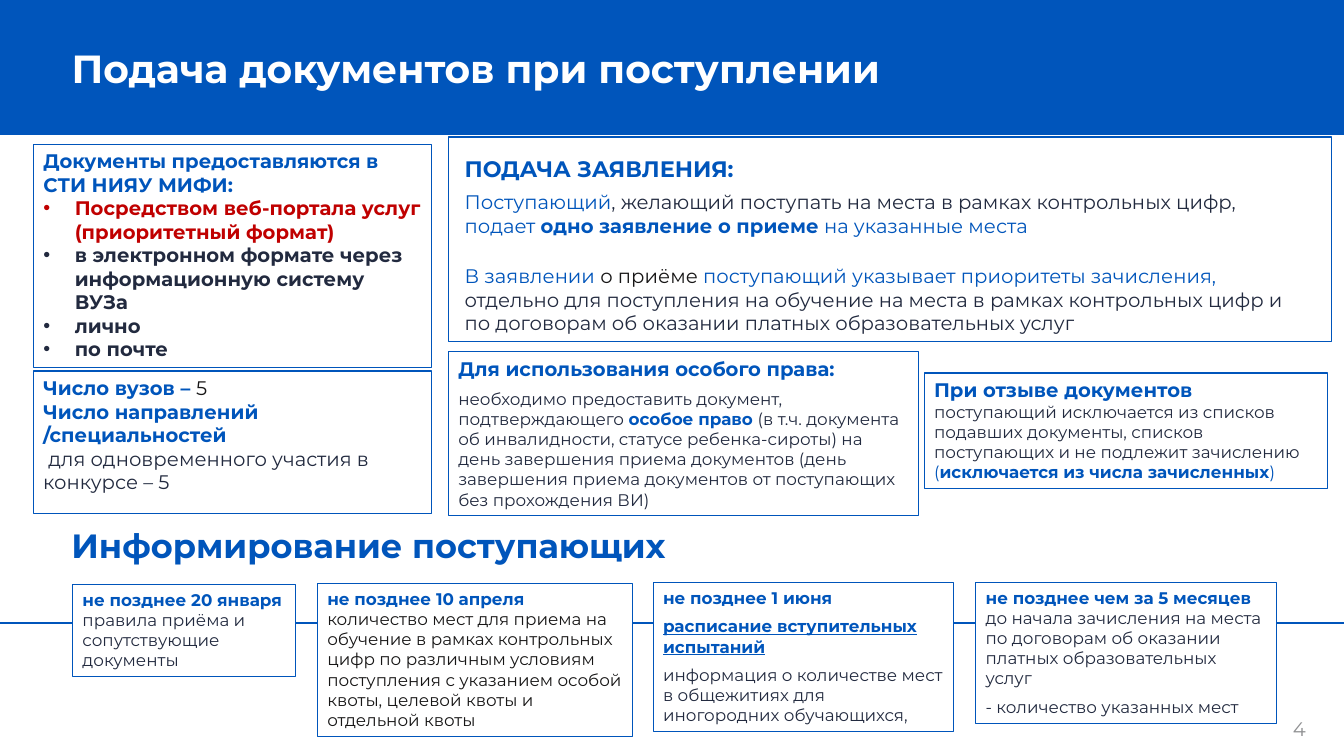
from dataclasses import dataclass

import pptx
import pptx.dml.color
import pptx.enum.shapes
import pptx.enum.text
import pptx.oxml
import pptx.oxml.ns
import pptx.util
from pptx.util import Cm

FONT = "Montserrat"
BLUE, NAVY, BLACK, RED = "0055BB", "222A3F", "171616", "C00000"
WHITE, GREY = "FFFFFF", "8F9092"
WIDTH, HEIGHT = 33.87, 19.05


@dataclass
class Span:
    text: str
    color: str = NAVY
    bold: bool = False
    size: float = 14
    underline: bool = False
    line_break: bool = False


@dataclass
class Para:
    spans: list[Span]
    after: float = 0
    bullet: bool = False


@dataclass
class Box:
    left: float
    top: float
    width: float
    height: float
    paras: list[Para]
    fill: str | None = None
    line: float | None = 0.75


def rgb(color: str) -> pptx.dml.color.RGBColor:
    return pptx.dml.color.RGBColor.from_string(color)


def place(sp, left: float, top: float, width: float, height: float) -> None:
    sp.left, sp.top, sp.width, sp.height = Cm(left), Cm(top), Cm(width), Cm(height)


def set_bullet(p, bullet: bool) -> None:
    """Override the bullet and indent that a placeholder inherits."""
    pPr = p._p.get_or_add_pPr()
    indent = Cm(0.79) if bullet else 0
    pPr.set("marL", str(indent))
    pPr.set("indent", str(-indent))
    bu = '<a:buChar {} char="•"/>' if bullet else "<a:buNone {}/>"
    pPr.append(pptx.oxml.parse_xml(bu.format(pptx.oxml.ns.nsdecls("a"))))


def write(sp, paras: list[Para], anchor=pptx.enum.text.MSO_ANCHOR.TOP, wrap: bool = True) -> None:
    tf = sp.text_frame
    tf.word_wrap = wrap
    tf.auto_size = pptx.enum.text.MSO_AUTO_SIZE.NONE
    tf.vertical_anchor = anchor
    for i, para in enumerate(paras):
        p = tf.add_paragraph() if i else tf.paragraphs[0]
        p.alignment = pptx.enum.text.PP_ALIGN.LEFT
        p.space_before = pptx.util.Pt(0)
        p.space_after = pptx.util.Pt(para.after)
        set_bullet(p, para.bullet)
        for span in para.spans:
            r = p.add_run()
            r.text = span.text
            r.font.name = FONT
            r.font.size = pptx.util.Pt(span.size)
            r.font.bold = span.bold
            r.font.underline = span.underline
            r.font.color.rgb = rgb(span.color)
            if span.line_break:
                p.add_line_break()


def add_rect(s, left: float, top: float, width: float, height: float,
             fill: str | None = None, line: float | None = None):
    sp = s.shapes.add_shape(pptx.enum.shapes.MSO_SHAPE.RECTANGLE,
                            Cm(left), Cm(top), Cm(width), Cm(height))
    sp.shadow.inherit = False
    style_outline(sp, line)
    if fill:
        sp.fill.solid()
        sp.fill.fore_color.rgb = rgb(fill)
    else:
        sp.fill.background()
    return sp


def style_outline(sp, line: float | None) -> None:
    if line:
        sp.line.color.rgb = rgb(BLUE)
        sp.line.width = pptx.util.Pt(line)
    else:
        sp.line.fill.background()


def add_text(s, left: float, top: float, width: float, height: float, paras: list[Para], **layout) -> None:
    write(s.shapes.add_textbox(Cm(left), Cm(top), Cm(width), Cm(height)), paras, **layout)


def date_head(text: str) -> Span:
    return Span(text, BLUE, True, 12, line_break=True)


DOCUMENTS = [
    Para([Span("Документы предоставляются в СТИ НИЯУ МИФИ:", BLUE, True)]),
    Para([Span("Посредством веб-портала услуг (приоритетный формат)", RED, True)], bullet=True),
    *(Para([Span(way, NAVY, True)], bullet=True) for way in (
        "в электронном формате через информационную систему ВУЗа", "лично", "по почте")),
]
APPLICATION = [
    Para([Span("ПОДАЧА ЗАЯВЛЕНИЯ:", BLUE, True, 16)], 6),
    Para([Span("Поступающий", BLUE),
          Span(", желающий поступать на места в рамках контрольных цифр, "),
          Span("подает ", BLUE), Span("одно заявление о приеме", BLUE, True),
          Span(" на указанные места", BLUE)], 6),
]
PRIORITIES = [
    Para([Span("В заявлении ", BLUE), Span("о приёме ", BLACK),
          Span("поступающий указывает приоритеты зачисления, ", BLUE),
          Span("отдельно для поступления на обучение на места в рамках контрольных цифр "
               "и по договорам об оказании платных образовательных услуг")], 6),
]
RULES = [
    Box(23.29, 9.4, 10.16, 2.9, [
        Para([Span("При отзыве документов", BLUE, True, line_break=True),
              Span("поступающий исключается из списков подавших документы, списков "
                   "поступающих и не подлежит зачислению ", size=12),
              Span("(", BLUE, size=12),
              Span("исключается из числа зачисленных", BLUE, True, 12),
              Span(")", BLUE, size=12)], 6)]),
    Box(11.3, 8.86, 11.84, 4.14, [
        Para([Span("Для использования особого права:", BLUE, True)], 6),
        Para([Span("необходимо предоставить документ, подтверждающего ", size=12),
              Span("особое право ", BLUE, True, 12),
              Span("(в т.ч. документа об инвалидности, статусе ребенка-сироты) на день "
                   "завершения приема документов (день завершения приема документов "
                   "от поступающих без прохождения ВИ)", size=12)], 6)]),
    Box(0.84, 9.35, 10.03, 3.58, [
        Para([Span("Число вузов – ", BLUE, True), Span("5", BLACK)]),
        Para([Span("Число направлений /специальностей", BLUE, True)]),
        Para([Span(" для одновременного участия в конкурсе – 5")])]),
]
DATES = [
    Box(1.83, 14.73, 5.61, 2.31, [
        Para([date_head("не позднее 20 января"),
              Span("правила приёма и сопутствующие документы", size=12)], 6)], WHITE),
    Box(8, 14.71, 7.95, 3.84, [
        Para([date_head("не позднее 10 апреля"),
              Span("количество мест для приема на обучение в рамках контрольных цифр "
                   "по различным условиям поступления с указанием особой квоты, "
                   "целевой квоты и отдельной квоты", BLACK, size=12)], 6)], WHITE),
    Box(16.46, 14.68, 7.57, 3.76, [
        Para([Span("не позднее 1 июня", BLUE, True, 12)], 6),
        Para([Span("расписание вступительных испытаний", BLUE, True, 12, True)], 6),
        Para([Span("информация о количестве мест в общежитиях для иногородних "
                   "обучающихся,", size=12)], 6)], WHITE),
    Box(24.59, 14.68, 7.57, 3.56, [
        Para([date_head("не позднее чем за 5 месяцев"),
              Span("до начала зачисления на места по договорам об оказании платных "
                   "образовательных услуг", size=12)], 6),
        Para([Span("- количество указанных мест", size=12)], 6)], WHITE),
]


def main() -> None:
    prs = pptx.Presentation()
    prs.slide_width, prs.slide_height = Cm(WIDTH), Cm(HEIGHT)
    s = prs.slides.add_slide(prs.slide_layouts[1])
    middle = pptx.enum.text.MSO_ANCHOR.MIDDLE

    title, documents = s.shapes.title, s.placeholders[1]
    place(title, 1.55, 0.99, 25.48, 1.45)
    write(title, [Para([Span("Подача документов при поступлении", WHITE, True, 28)])], middle)
    header = add_rect(s, 0, 0, WIDTH, 3.4, BLUE)
    title.element.addprevious(header.element)

    place(documents, 0.84, 3.63, 10.03, 5.64)
    style_outline(documents, 0.75)
    write(documents, DOCUMENTS)

    add_rect(s, 11.3, 3.45, 22.25, 5.16, WHITE, 1)
    add_text(s, 11.46, 3.78, 20.68, 2.36, APPLICATION)
    add_text(s, 11.46, 6.53, 21.67, 2.06, PRIORITIES)
    add_text(s, 1.55, 13.11, 29.79, 1.27,
             [Para([Span("Информирование поступающих", BLUE, True, 24)])], anchor=middle)

    timeline = s.shapes.add_connector(pptx.enum.shapes.MSO_CONNECTOR.STRAIGHT,
                                      0, Cm(15.7), Cm(WIDTH), Cm(15.7))
    style_outline(timeline, 1)
    timeline.element.spPr.append(
        pptx.oxml.parse_xml(f"<a:effectLst {pptx.oxml.ns.nsdecls('a')}/>"))

    for box in RULES + DATES:
        sp = add_rect(s, box.left, box.top, box.width, box.height, box.fill, box.line)
        write(sp, box.paras)

    add_text(s, 32.33, 17.93, 1.14, 0.86, [Para([Span("4", GREY)])], wrap=False)
    prs.save("out.pptx")


if __name__ == "__main__":
    main()
